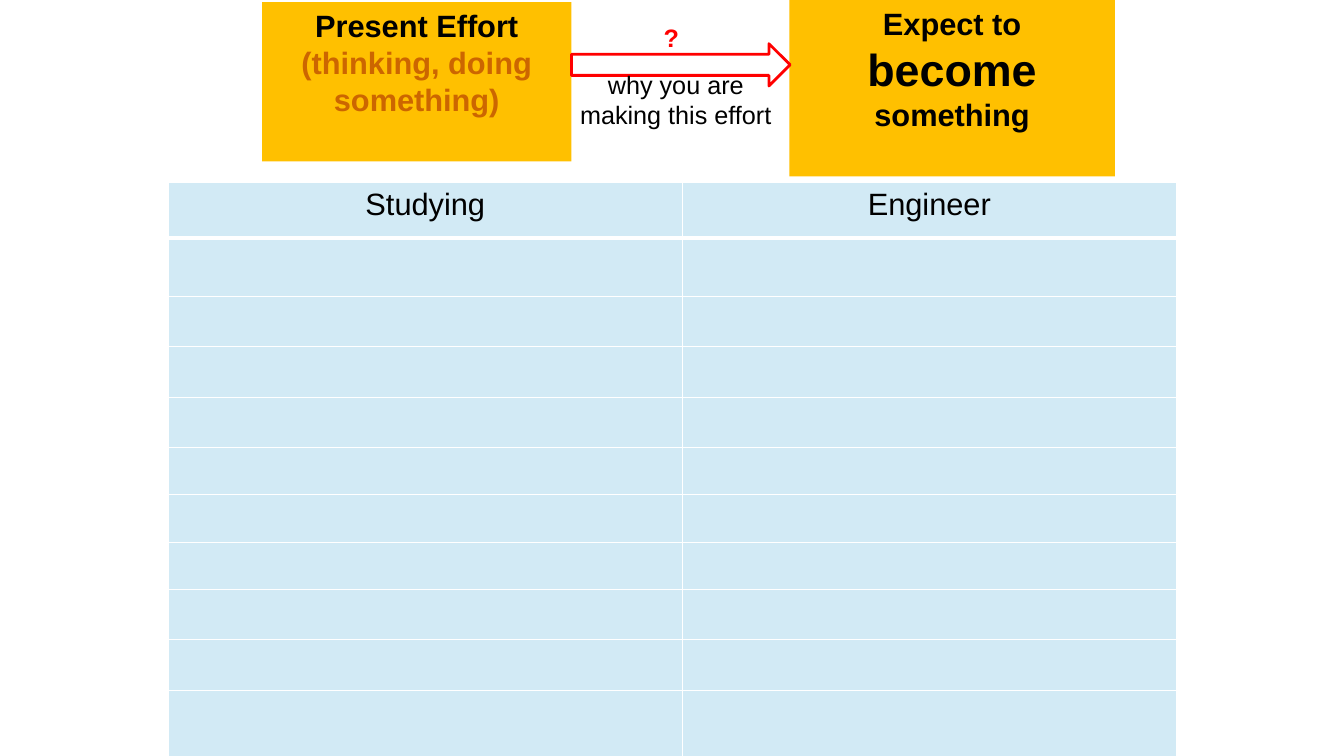
from pptx import Presentation
from pptx.dml.color import RGBColor
from pptx.enum.shapes import MSO_SHAPE as Preset
from pptx.enum.text import MSO_ANCHOR as Anchor, PP_ALIGN as Align
from pptx.oxml import parse_xml
from pptx.oxml.ns import nsdecls
from pptx.util import Pt


def color(hex_code):
    return RGBColor.from_string(hex_code)


class EffortSlide:
    FONT = "Arial"
    BLACK, RED, BROWN = "000000", "FF0000", "CC6600"
    AMBER, PALE_BLUE, WHITE = "FFC000", "D2EAF5", "FFFFFF"

    def __init__(self, deck):
        self.slide = deck.slides.add_slide(deck.slide_layouts[6])

    def set_text(self, frame, paragraphs, bold=False, wrap=True):
        """Each paragraph is a list of (text, size, colour) runs."""
        frame.word_wrap = wrap
        frame.vertical_anchor = Anchor.TOP
        for index, runs in enumerate(paragraphs):
            paragraph = frame.add_paragraph() if index else frame.paragraphs[0]
            paragraph.alignment = Align.CENTER
            for text, size, hex_code in runs:
                run = paragraph.add_run()
                run.text = text
                run.font.name = self.FONT
                run.font.size = Pt(size)
                run.font.bold = bold
                run.font.color.rgb = color(hex_code)

    def box(self, left, top, width, height, paragraphs):
        panel = self.slide.shapes.add_shape(
            Preset.RECTANGLE, Pt(left), Pt(top), Pt(width), Pt(height))
        panel.shadow.inherit = False
        panel.fill.solid()
        panel.fill.fore_color.rgb = color(self.AMBER)
        panel.line.fill.background()
        self.set_text(panel.text_frame, paragraphs, bold=True)

    def arrow(self, left, top, width, height):
        arrow = self.slide.shapes.add_shape(
            Preset.RIGHT_ARROW, Pt(left), Pt(top), Pt(width), Pt(height))
        arrow.shadow.inherit = False
        arrow.fill.background()
        arrow.line.color.rgb = color(self.RED)
        arrow.line.width = Pt(2)

    def label(self, left, top, width, height, paragraphs, **style):
        label = self.slide.shapes.add_textbox(
            Pt(left), Pt(top), Pt(width), Pt(height))
        self.set_text(label.text_frame, paragraphs, **style)

    def border(self, cell, side, width):
        cell._tc.get_or_add_tcPr().append(parse_xml(
            f'<a:ln{side} {nsdecls("a")} w="{Pt(width)}"><a:solidFill>'
            f'<a:srgbClr val="{self.WHITE}"/></a:solidFill></a:ln{side}>'))

    def table(self, left, top, widths, heights, headings):
        grid = self.slide.shapes.add_table(
            len(heights), len(widths), Pt(left), Pt(top),
            Pt(sum(widths)), Pt(sum(heights))).table
        grid.first_row = grid.horz_banding = False
        for column, width in zip(grid.columns, widths):
            column.width = Pt(width)
        for number, (row, height) in enumerate(zip(grid.rows, heights)):
            row.height = Pt(height)
            for cell in row.cells:
                # The rule under the headings is thicker
                for side, thick_row in (("L", None), ("R", None), ("T", 1), ("B", 0)):
                    self.border(cell, side, 3 if number == thick_row else 1)
                cell.fill.solid()
                cell.fill.fore_color.rgb = color(self.PALE_BLUE)
        for cell, heading in zip(grid.rows[0].cells, headings):
            self.set_text(cell.text_frame, [[(heading, 22, self.BLACK)]])


def main():
    deck = Presentation()
    deck.slide_width, deck.slide_height = Pt(960), Pt(540)
    page = EffortSlide(deck)

    # Effort and expectation
    page.box(187.2, 1.44, 221, 113.8, [
        [("Present Effort", 22, page.BLACK)],
        [("(thinking, doing something)", 22, page.BROWN)]])
    page.box(563.8, 0, 232.6, 126, [
        [("Expect to ", 22, page.BLACK), ("become ", 32, page.BLACK),
         ("something", 22, page.BLACK)]])

    # Pairs to fill in
    page.table(120.2, 130.3, [367.2, 352.8],
               [39.6, 41.8] + [36] * 3 + [33.8] * 3 + [36] * 2 + [49],
               ["Studying", "Engineer"])

    # Arrow with its question
    page.arrow(408.2, 31.2, 156.2, 30.2)
    page.label(466.6, 12.2, 25.9, 28.8, [[("?", 18, page.RED)]],
               bold=True, wrap=False)
    page.label(403.9, 46.1, 162.7, 51.1, [
        [("why you are ", 18, page.BLACK)],
        [("making this effort ", 18, page.BLACK)]])

    deck.save("out.pptx")


if __name__ == "__main__":
    main()
